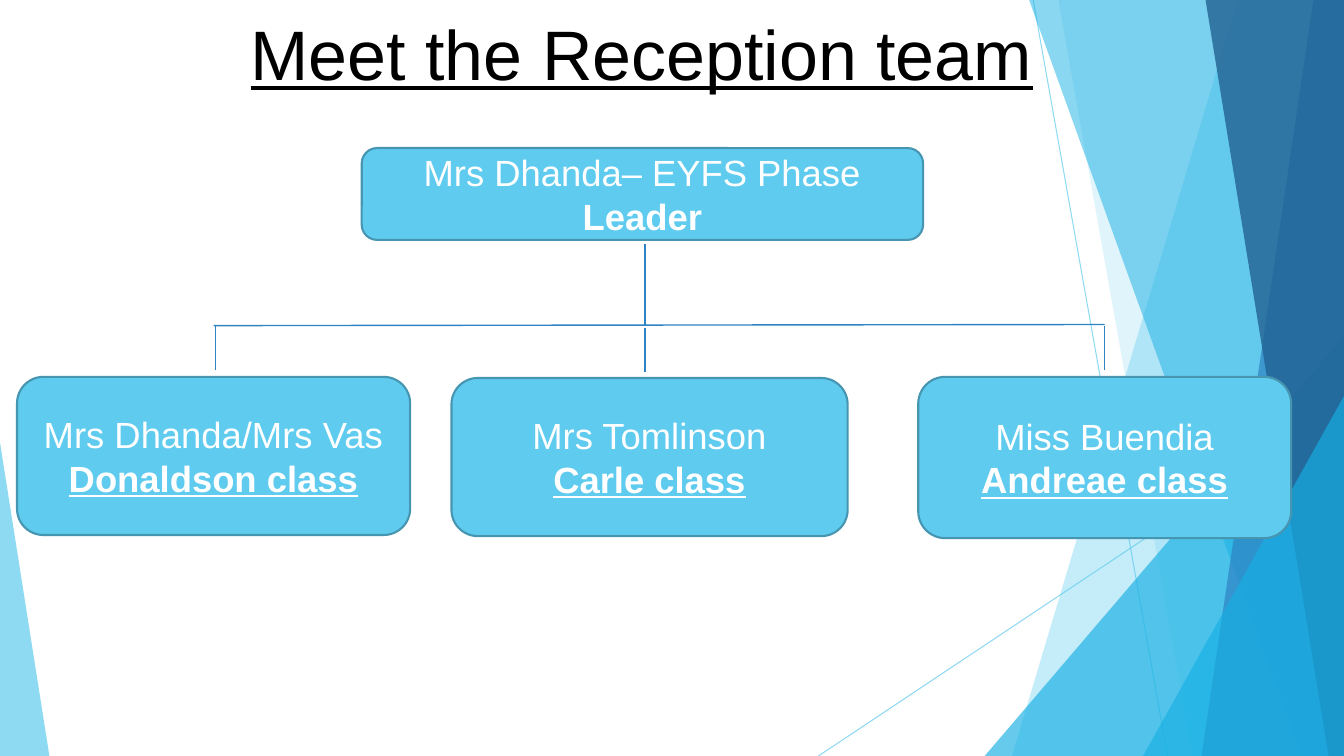
from pptx import Presentation
from pptx.dml.color import RGBColor
from pptx.enum import shapes, text
from pptx.oxml import ns
from pptx.util import Pt
from lxml import etree

THEME = {
    "sky": "5FCBEF", "cyan": "17B0E4", "blue": "2E83C3", "navy": "226292",
    "edge": "4696B1", "white": "FFFFFF", "black": "000000",
    "font": "Arial", "title": 50, "body": 26,
}
W, H = 960, 540


def paint(fmt, color, alpha=100):
    """Solid colour with an opacity in percent."""
    fmt.solid()
    fmt.fore_color.rgb = RGBColor.from_string(THEME[color])
    if alpha < 100:
        clr = fmt._xPr.find(".//" + ns.qn("a:srgbClr"))
        etree.SubElement(clr, ns.qn("a:alpha"), val=str(alpha * 1000))


def add_line(s, x1, y1, x2, y2, color, width, alpha=100):
    c = s.shapes.add_connector(shapes.MSO_CONNECTOR.STRAIGHT,
                               Pt(x1), Pt(y1), Pt(x2), Pt(y2))
    c.line.width = Pt(width)
    paint(c.line.fill, color, alpha)
    etree.SubElement(c._element.spPr, ns.qn("a:effectLst"))


prs = Presentation()
prs.slide_width, prs.slide_height = Pt(W), Pt(H)
s = prs.slides.add_slide(prs.slide_layouts[5])

# Thin rays behind the facets
add_line(s, 738, 0, 834, H, "sky", 0.75, 70)
add_line(s, W, 290, 584.6, H, "sky", 0.75, 70)

# Facets: ("band", top x, bottom x) reaches the right edge;
# ("triangle", left, top, width, apex position) stands on the bottom edge
facets = [
    (("band", 884.2, 722.9), "sky", 36),
    (("band", 756, 851.8), "sky", 20),
    (("triangle", 703.4, 239.8, 256.6, 1), "cyan", 66),
    (("band", 735.1, 929.5), "cyan", 50),
    (("band", 938.2, 858.2), "blue", 70),
    (("band", 861.1, 949), "navy", 80),
    (("triangle", 816.5, 283, 143.5, 1), "cyan", 66),
    (("triangle", 0, 316.1, 35.3, 0), "sky", 70),
]
for (kind, *geometry), color, alpha in facets:
    if kind == "band":
        top_x, bottom_x = geometry
        outline = s.shapes.build_freeform(Pt(top_x), 0)
        outline.add_line_segments([(Pt(W), 0), (Pt(W), Pt(H)), (Pt(bottom_x), Pt(H))])
        sp = outline.convert_to_shape()
    else:
        x, y, w, apex = geometry
        sp = s.shapes.add_shape(shapes.MSO_SHAPE.ISOSCELES_TRIANGLE,
                                Pt(x), Pt(y), Pt(w), Pt(H - y))
        sp.adjustments[0] = apex
    sp.shadow.inherit = False
    sp.line.fill.background()
    paint(sp.fill, color, alpha)

# Title
title = s.shapes.title
title.left, title.top, title.width, title.height = Pt(120), Pt(3.6), Pt(677), Pt(103.7)
tf = title.text_frame
tf.auto_size = text.MSO_AUTO_SIZE.NONE
tf.vertical_anchor = text.MSO_ANCHOR.TOP
p = tf.paragraphs[0]
p.alignment = text.PP_ALIGN.CENTER
r = p.add_run()
r.text = "Meet the Reception team"
for name, value in {"name": THEME["font"], "size": Pt(THEME["title"]), "underline": True}.items():
    setattr(r.font, name, value)
paint(r.font.fill, "black")

# Team boxes: position, then paragraphs of (text, bold, underline) runs
boxes = [
    ((322.5, 270, 283, 113),
     [[("Mrs Tomlinson", False, False)], [("Carle class", True, True)]]),
    ((655.9, 269.2, 266.4, 115.2),
     [[("Miss Buendia", False, False)], [("Andreae class", True, True)]]),
    ((12.2, 269.2, 280.8, 113),
     [[("Mrs Dhanda/Mrs Vas", False, False)], [("Donaldson class", True, True)]]),
    ((258.4, 105.8, 401, 65.6),
     [[("Mrs Dhanda– EYFS Phase ", False, False), ("Leader", True, False)]]),
]
for box, paragraphs in boxes:
    sp = s.shapes.add_shape(shapes.MSO_SHAPE.ROUNDED_RECTANGLE, *map(Pt, box))
    sp.shadow.inherit = False
    paint(sp.fill, "sky")
    paint(sp.line.fill, "edge")
    sp.line.width = Pt(1.5)
    tf = sp.text_frame
    tf.word_wrap = True
    tf.vertical_anchor = text.MSO_ANCHOR.MIDDLE
    for i, runs in enumerate(paragraphs):
        p = tf.add_paragraph() if i else tf.paragraphs[0]
        p.alignment = text.PP_ALIGN.CENTER
        for words, bold, underline in runs:
            r = p.add_run()
            r.text = words
            style = {"name": THEME["font"], "size": Pt(THEME["body"]),
                     "bold": bold, "underline": underline}
            for name, value in style.items():
                setattr(r.font, name, value)
            paint(r.font.fill, "white")

# Chart lines: crossbar, three drops and the stem from the leader
for ends in [(152.6, 232.6, 789.1, 231.8),
             (154.1, 232.6, 154.1, 264.2),
             (460.8, 234, 460.8, 265.7),
             (789.1, 232.6, 789.1, 264.2),
             (460.8, 174.2, 460.8, 231.8)]:
    add_line(s, *ends, "blue", 1)

prs.save("out.pptx")
